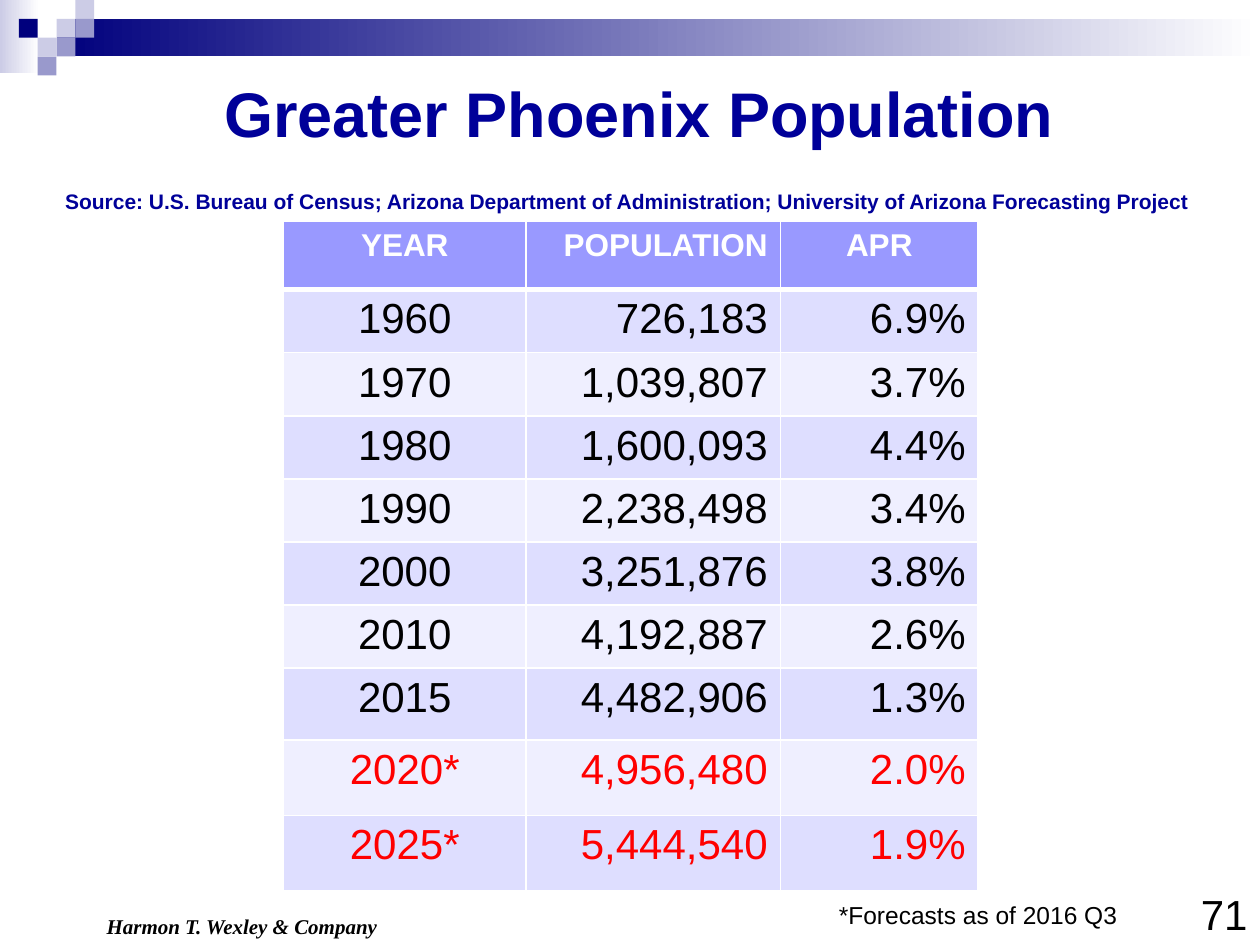
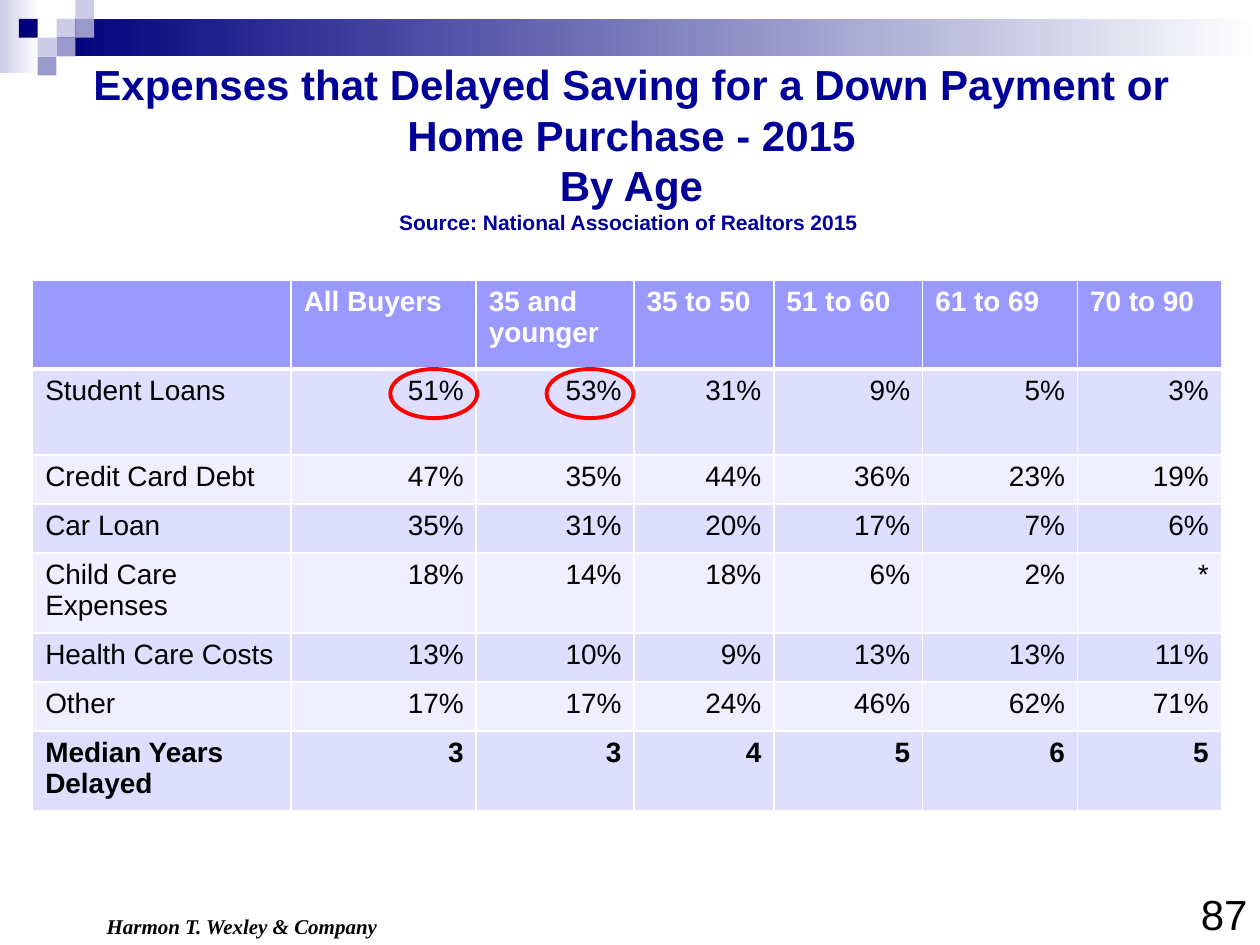
from pptx import Presentation
from pptx.dml.color import RGBColor
from pptx.enum.shapes import MSO_SHAPE
from pptx.enum.text import MSO_ANCHOR, PP_ALIGN
from pptx.oxml import parse_xml
from pptx.oxml.ns import nsdecls
from pptx.util import Cm, Pt

RECTANGLE, OVAL = MSO_SHAPE.RECTANGLE, MSO_SHAPE.OVAL
LEFT, CENTER, RIGHT = PP_ALIGN.LEFT, PP_ALIGN.CENTER, PP_ALIGN.RIGHT
TOP, MIDDLE = MSO_ANCHOR.TOP, MSO_ANCHOR.MIDDLE


class Theme:
    sans, serif = "Arial", "Times New Roman"
    navy, lilac, pale, white = "00007D", "9999CC", "CCCCE6", "FFFFFF"
    title, black, red = "000099", "000000", "FF0000"
    header_fill, row_fills = "9999FF", ("DEDEFF", "EFEFFF")
    title_size, long_title_size, source_size = 36, 24, 12
    footer_size, note_size, number_size = 12, 14, 24


def add_text(frame, lines, alignment=LEFT, color=Theme.black, bold=False,
             italic=False, font=Theme.sans):
    """Write (text, size, space before) lines, one paragraph each."""
    for index, (text, size, space) in enumerate(lines):
        paragraph = frame.add_paragraph() if index else frame.paragraphs[0]
        paragraph.alignment = alignment
        if space:
            paragraph.space_before = Pt(space)
        run = paragraph.add_run()
        run.text = text
        run.font.name, run.font.size = font, Pt(size)
        run.font.bold, run.font.italic = bold, italic
        run.font.color.rgb = RGBColor.from_string(color)


def add_data_table(slide, left, top, widths, heights, rows, sizes, header_alignments, alignments):
    """Build a banded table; sizes are those of the header and the body."""
    table = slide.shapes.add_table(len(rows), len(widths), Cm(left), Cm(top),
                                   Cm(sum(widths)), Cm(sum(heights))).table
    table.horz_banding = False
    for column, width in zip(table.columns, widths):
        column.width = Cm(width)
    for row_index, values in enumerate(rows):
        table.rows[row_index].height = Cm(heights[row_index])
        header = row_index == 0
        forecast = "*" in values[0]
        total = values[0].startswith("Median")
        fill = Theme.header_fill if header else Theme.row_fills[(row_index - 1) % 2]
        color = Theme.white if header else Theme.red if forecast else Theme.black
        row_alignments = header_alignments if header else alignments
        for column_index, value in enumerate(values):
            cell = table.cell(row_index, column_index)
            properties = cell._tc.get_or_add_tcPr()
            for side in "LRTB":
                thick = (header and side == "B") or (row_index == 1 and side == "T")
                properties.append(parse_xml(
                    f'<a:ln{side} {nsdecls("a")} w="{Pt(3 if thick else 1)}"><a:solidFill>'
                    f'<a:srgbClr val="{Theme.white}"/></a:solidFill></a:ln{side}>'))
            cell.fill.solid()
            cell.fill.fore_color.rgb = RGBColor.from_string(fill)
            if value:
                add_text(cell.text_frame, [(value, sizes[0 if header else 1], 0)],
                         row_alignments[column_index], color, header or total)


presentation = Presentation()
presentation.slide_width, presentation.slide_height = Cm(25.4), Cm(19.05)

# Band at the top: gradient bars, then squares on a grid
bars = [(0, 0, 0.79, 1.47, Theme.pale), (1.14, 0.38, 24.26, 0.76, Theme.navy)]
square = 0.38
squares = [(3, 1, Theme.pale), (4, 0, Theme.pale), (4, 1, Theme.lilac),
           (2, 2, Theme.pale), (1, 1, Theme.navy), (3, 2, Theme.lilac),
           (2, 3, Theme.lilac)]
blocks = [(*bar, True) for bar in bars] + [
    (column * square, row * square, square, square, color, False)
    for column, row, color in squares]

# Titles: left, width, anchor, lines
titles = [
    (0.43, 24.56, TOP, [
        (" Greater Phoenix Population", Theme.title_size, 0),
        ("Source: U.S. Bureau of Census; Arizona Department of Administration; "
         "University of Arizona Forecasting Project ", Theme.source_size, 22)]),
    (1.3, 22.86, MIDDLE, [
        ("Expenses that Delayed Saving for a Down Payment or Home Purchase - 2015",
         Theme.long_title_size, 0),
        ("By Age", Theme.long_title_size, 0),
        ("Source: National Association of Realtors 2015 ", Theme.source_size, 0)]),
]

# Parts that both slides share
slides = []
for (title_left, title_width, anchor, lines), number in zip(titles, ("71", "87")):
    slide = presentation.slides.add_slide(presentation.slide_layouts[6])
    slides.append(slide)
    for left, top, width, height, color, fades in blocks:
        shape = slide.shapes.add_shape(RECTANGLE, Cm(left), Cm(top), Cm(width), Cm(height))
        shape.shadow.inherit = False
        shape.line.fill.background()
        if fades:
            shape.fill.gradient()
            shape.fill.gradient_angle = 0
            for stop, stop_color in zip(shape.fill.gradient_stops, (color, Theme.white)):
                stop.color.rgb = RGBColor.from_string(stop_color)
        else:
            shape.fill.solid()
            shape.fill.fore_color.rgb = RGBColor.from_string(color)

    footer = slide.shapes.add_textbox(Cm(1.9), Cm(18.29), Cm(6.35), Cm(0.76)).text_frame
    footer.word_wrap = True
    add_text(footer, [("Harmon T. Wexley & Company", Theme.footer_size, 0)],
             bold=True, italic=True, font=Theme.serif)

    title = slide.shapes.add_textbox(Cm(title_left), Cm(1.37), Cm(title_width), Cm(3.18)).text_frame
    title.word_wrap = True
    title.vertical_anchor = anchor
    add_text(title, lines, CENTER, Theme.title, bold=True)

    page = slide.shapes.add_textbox(Cm(22.58), Cm(17.78), Cm(2.82), Cm(1.27)).text_frame
    page.word_wrap = True
    add_text(page, [(number, Theme.number_size, 0)], RIGHT)

population_slide, expenses_slide = slides

# Population table and its note
population = [
    ("YEAR", "POPULATION", "APR"),
    ("1960", "726,183", "6.9%"),
    ("1970", "1,039,807", "3.7%"),
    ("1980", "1,600,093", "4.4%"),
    ("1990", "2,238,498", "3.4%"),
    ("2000", "3,251,876", "3.8%"),
    ("2010", "4,192,887", "2.6%"),
    ("2015", "4,482,906", "1.3%"),
    ("2020*", "4,956,480", "2.0%"),
    ("2025*", "5,444,540", "1.9%"),
]
add_data_table(population_slide, 5.72, 4.47, (4.88, 5.13, 3.99),
               [1.37] + [1.21] * 6 + [1.45, 1.52, 1.52], population, (18, 24),
               (CENTER, RIGHT, CENTER), (CENTER, RIGHT, RIGHT))
note = population_slide.shapes.add_textbox(Cm(16.66), Cm(18.01), Cm(6.15), Cm(0.86)).text_frame
note.word_wrap = False
add_text(note, [("*Forecasts as of 2016 Q3", Theme.note_size, 0)])

# Expenses table
expenses = [
    ("", "All Buyers", "35 and younger", "35 to 50", "51 to 60", "61 to 69", "70 to 90"),
    ("Student Loans", "51%", "53%", "31%", "9%", "5%", "3%"),
    ("Credit Card Debt", "47%", "35%", "44%", "36%", "23%", "19%"),
    ("Car Loan", "35%", "31%", "20%", "17%", "7%", "6%"),
    ("Child Care Expenses", "18%", "14%", "18%", "6%", "2%", "*"),
    ("Health Care Costs", "13%", "10%", "9%", "13%", "13%", "11%"),
    ("Other", "17%", "17%", "24%", "46%", "62%", "71%"),
    ("Median Years Delayed", "3", "3", "4", "5", "6", "5"),
]
add_data_table(expenses_slide, 0.66, 5.64, (5.21, 3.73, 3.18, 2.82, 3, 3.12, 2.9),
               [1.8, 1.73] + [0.99] * 6, expenses, (16, 16),
               [LEFT] * 7, [LEFT] + [RIGHT] * 6)

# Rings around the two highest student loan shares
for left in (7.87, 11.02):
    ring = expenses_slide.shapes.add_shape(OVAL, Cm(left), Cm(7.44), Cm(1.75), Cm(0.99))
    ring.shadow.inherit = False
    ring.fill.background()
    ring.line.color.rgb = RGBColor.from_string(Theme.red)
    ring.line.width = Pt(2.25)

presentation.save("out.pptx")
